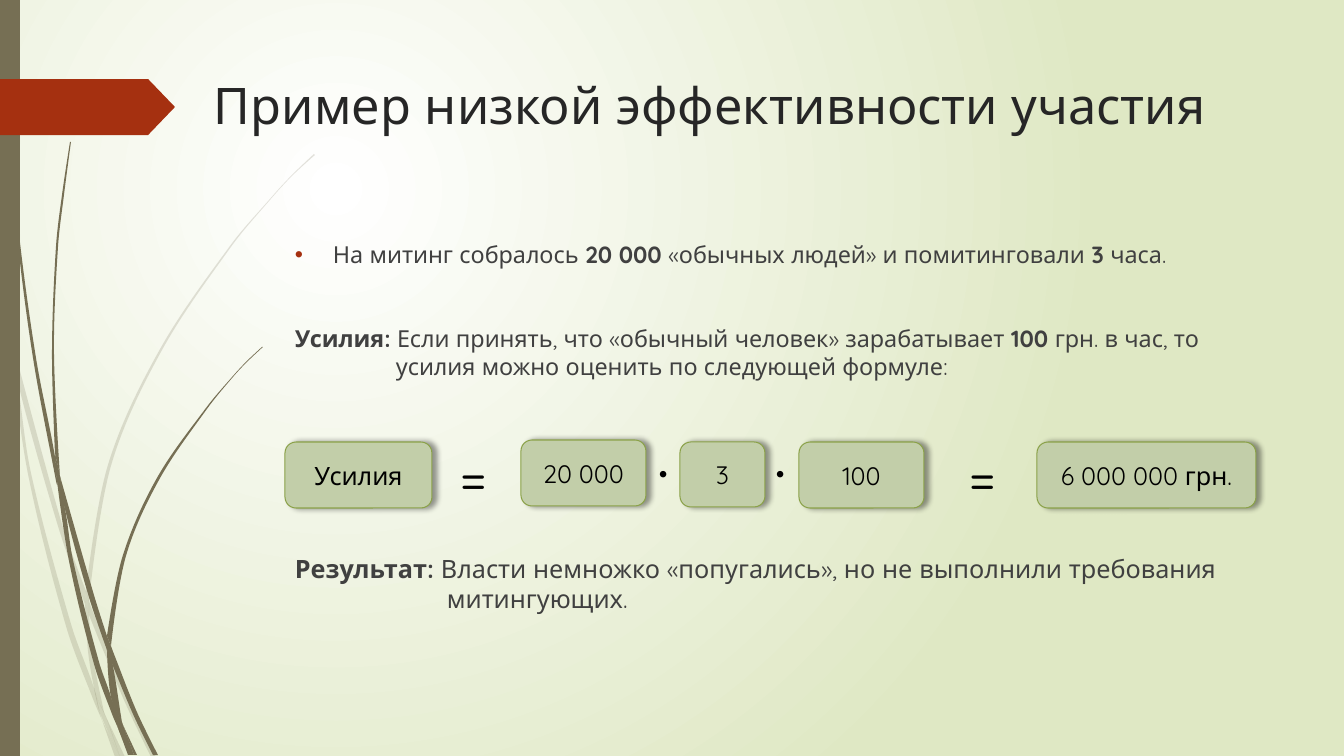
import math
from lxml import etree
from pptx import Presentation
from pptx import util as u
from pptx.dml.color import RGBColor
from pptx.enum import shapes, text
from pptx.oxml.ns import qn

WIDTH, HEIGHT = 1344, 756
PX = 12192000 / WIDTH
FONT = "Quicksand"
BROWN, RED, DARK, BLACK = "766F54", "A53010", "404040", "000000"

# Each piece of grass: points down its left edge, then down its right edge
PALE_GRASS = [
    ([(0, 301), (10, 347), (11, 353)], [(0, 284), (9, 325), (11, 353)]),
    ([(14, 348), (17, 379), (58, 526), (85, 604)], [(14, 348), (62, 524), (86, 591)]),
    ([(89, 615), (124, 700), (151, 757)], [(89, 601), (93, 612), (128, 698), (156, 757)]),
    ([(106, 717), (120, 757)], [(106, 717), (125, 757)]),
    ([(11, 353), (28, 474), (66, 626), (93, 699), (102, 720)],
     [(11, 353), (17, 379), (31, 473), (71, 624), (94, 688), (100, 713), (102, 720)]),
    ([(85, 604), (88, 651), (94, 688), (97, 698), (106, 717)],
     [(89, 613), (92, 651), (104, 712), (106, 717)]),
    ([(314, 154), (291, 176), (270, 199), (230, 246), (159, 351), (108, 465), (86, 591)],
     [(315, 155), (292, 176), (270, 200), (231, 247), (161, 352), (111, 466), (89, 601)]),
    ([(102, 720), (115, 757)], [(102, 720), (120, 757)]),
    ([(86, 591), (85, 604)], [(89, 601), (89, 613)]),
    ([(94, 688), (100, 713), (120, 757)], [(94, 688), (97, 698), (106, 717), (120, 757)]),
]
DARK_GRASS = [
    ([(3, 0), (4, 48), (7, 111), (17, 235), (33, 358), (56, 481), (57, 485)],
     [(4, 0), (5, 48), (8, 110), (19, 234), (36, 358), (55, 457), (57, 485)]),
    ([(60, 476), (65, 509), (89, 597), (107, 650)], [(60, 476), (94, 595), (107, 636)]),
    ([(111, 661), (133, 714), (153, 755)], [(111, 646), (114, 654), (137, 712), (158, 755)]),
    ([(57, 481), (69, 561), (94, 664), (112, 714), (118, 728)],
     [(57, 481), (65, 509), (73, 560), (99, 662), (111, 697), (118, 728)]),
    ([(70, 142), (62, 195), (56, 247), (52, 352), (55, 453)],
     [(71, 142), (64, 195), (58, 247), (54, 352), (60, 476)]),
    ([(123, 725), (134, 755)], [(123, 725), (137, 755)]),
    ([(55, 453), (57, 481), (65, 509)], [(55, 453), (60, 476), (65, 509)]),
    ([(262, 347), (247, 361), (233, 376), (206, 408), (157, 478), (123, 555), (107, 636)],
     [(263, 347), (247, 362), (233, 377), (207, 409), (159, 480), (126, 556), (111, 646)]),
    ([(118, 728), (128, 755)], [(118, 728), (132, 755)]),
    ([(107, 650), (111, 697), (123, 725)], [(107, 650), (112, 661), (122, 722), (123, 725)]),
    ([(107, 636), (107, 650)], [(111, 646), (112, 661)]),
    ([(111, 697), (118, 728), (131, 755)], [(111, 697), (117, 712), (123, 725), (134, 755)]),
]


def px(value):
    return u.Emu(round(value * PX))


def color(value):
    return RGBColor.from_string(value)


def paint(shape, fill, line=None):
    shape.shadow.inherit = False
    shape.fill.solid()
    shape.fill.fore_color.rgb = color(fill)
    if line:
        shape.line.color.rgb = color(line)
        shape.line.width = u.Pt(0.75)
    else:
        shape.line.fill.background()


def add_text_box(slide, left, top, width, height, wrap=True):
    box = slide.shapes.add_textbox(px(left), px(top), px(width), px(height))
    box.text_frame.word_wrap = wrap
    return box.text_frame


def write(paragraph, runs, size, font_color, hang=0):
    """Runs alternate between regular and bold, starting with regular."""
    for index, content in enumerate(runs):
        if content:
            run = paragraph.add_run()
            run.text = content
            if index % 2:
                run.font.bold = True
    paragraph.font.name = FONT
    paragraph.font.size = u.Pt(size)
    paragraph.font.color.rgb = color(font_color)
    if hang:
        properties = paragraph._p.get_or_add_pPr()
        properties.set("marL", str(px(hang)))
        properties.set("indent", str(-px(hang)))


def add_bullet(paragraph):
    properties = paragraph._p.get_or_add_pPr()
    bullet_color = etree.Element(qn("a:buClr"))
    etree.SubElement(bullet_color, qn("a:srgbClr"), val=RED)
    bullet_font = etree.Element(qn("a:buFont"), typeface="Arial")
    bullet = etree.Element(qn("a:buChar"), char="•")
    for offset, element in enumerate((bullet_color, bullet_font, bullet)):
        properties.insert(offset, element)


def handle(start, end, before, after):
    """Bezier handle at start, a third of the way to end, parallel to before-after."""
    span = math.dist(before, after) or 1
    reach = math.dist(start, end) / 3 / span
    return tuple(s + (a - b) * reach for s, a, b in zip(start, after, before))


def bend(blade, corners):
    """Turn the straight sides of a blade into curves, sharp only at its corners."""
    sides = list(blade._element.iter(qn("a:moveTo"), qn("a:lnTo")))
    points = [(int(side[0].get("x")), int(side[0].get("y"))) for side in sides]
    last = len(points) - 1
    for i in range(1, last + 1):
        start, end = points[i - 1], points[i]
        first = start if i - 1 in corners else handle(start, end, points[i - 2], end)
        second = end if i in corners or i == last else handle(end, start, points[i + 1], start)
        curve = etree.Element(qn("a:cubicBezTo"))
        for x, y in (first, second, end):
            etree.SubElement(curve, qn("a:pt"), x=str(round(x)), y=str(round(y)))
        sides[i].getparent().replace(sides[i], curve)


def add_grass(slide, pieces, opacity):
    group = slide.shapes.add_group_shape()
    for left_edge, right_edge in pieces:
        outline = left_edge + right_edge[::-1]
        builder = group.shapes.build_freeform(*outline[0], scale=PX / 100)
        fine = [(x * 100, y * 100) for x, y in outline]
        builder = group.shapes.build_freeform(*fine[0], scale=PX / 100)
        builder.add_line_segments(fine[1:], close=True)
        blade = builder.convert_to_shape()
        paint(blade, BROWN)
        bend(blade, {0, len(left_edge) - 1, len(left_edge), len(outline) - 1})
        if opacity < 100:
            fill = blade._element.spPr.find(qn("a:solidFill"))
            etree.SubElement(fill[0], qn("a:alpha"), val=str(opacity * 1000))


def set_background(slide):
    fill = slide.background.fill
    fill.gradient()
    for stop, value in zip(fill.gradient_stops, ("FFFFFF", "DFE8C4")):
        stop.color.rgb = color(value)
    gradient = slide.element.find(".//" + qn("a:gradFill"))
    circle = etree.Element(qn("a:path"), {"path": "circle"})
    etree.SubElement(circle, qn("a:fillToRect"), l="50000", t="50000", r="100000", b="100000")
    gradient.replace(gradient.find(qn("a:lin")), circle)


def add_decoration(slide):
    add_grass(slide, PALE_GRASS, 20)
    add_grass(slide, DARK_GRASS, 100)
    bar = slide.shapes.add_shape(shapes.MSO_SHAPE.RECTANGLE, 0, 0, px(20), px(HEIGHT))
    paint(bar, BROWN)
    arrow = slide.shapes.add_shape(shapes.MSO_SHAPE.PENTAGON, 0, px(79), px(175), px(56))
    arrow.adjustments[0] = 0.48
    paint(arrow, RED)


def add_title(slide, left, top, width, height):
    frame = add_text_box(slide, left, top, width, height)
    write(frame.paragraphs[0], ["Пример низкой эффективности участия"], 36, "262626")


def add_body(slide, left, top, width, height):
    frame = add_text_box(slide, left, top, width, height)
    rally, effort = frame.paragraphs[0], frame.add_paragraph()
    write(rally, ["На митинг собралось ", "20 000 ", "«обычных людей» и помитинговали ",
                  "3 ", "часа."], 16.7, DARK, hang=38)
    add_bullet(rally)
    write(effort, ["", "Усилия:", " Если принять, что «обычный человек» зарабатывает ", "100 ",
                   "грн. в час, то усилия можно оценить по следующей формуле:"],
          16.7, DARK, hang=101)
    effort.space_before = u.Pt(40)


def add_formula_box(slide, content, left, top, width, height):
    box = slide.shapes.add_shape(shapes.MSO_SHAPE.ROUNDED_RECTANGLE,
                                 px(left), px(top), px(width), px(height))
    paint(box, "C2CEA9", "8BA249")
    effects = box._element.spPr.find(qn("a:effectLst"))
    shadow = etree.SubElement(effects, qn("a:outerShdw"), blurRad=str(u.Pt(4)),
                              dist=str(u.Pt(3)), dir="0", rotWithShape="0")
    shade = etree.SubElement(shadow, qn("a:srgbClr"), val=BLACK)
    etree.SubElement(shade, qn("a:alpha"), val="40000")
    box.text_frame.word_wrap = True
    box.text_frame.vertical_anchor = text.MSO_ANCHOR.MIDDLE
    paragraph = box.text_frame.paragraphs[0]
    paragraph.alignment = text.PP_ALIGN.CENTER
    write(paragraph, [content], 18, BLACK)


def add_formula(slide, left, top):
    for content, x, y, width, height in (
            ("Усилия", 0, 2, 147, 66), ("20 000", 236, 0, 125, 66), ("3", 395, 2, 85, 65),
            ("100", 514, 2, 125, 66), ("6 000 000 грн.", 752, 2, 219, 66)):
        add_formula_box(slide, content, left + x, top + y, width, height)
    for sign, size, x, y, width, height in (
            ("=", 40, 165, -4, 54, 78), ("=", 40, 674, -4, 54, 78),
            ("•", 18, 364, 13, 39, 40), ("•", 18, 481, 13, 35, 40)):
        frame = add_text_box(slide, left + x, top + y, width, height, wrap=False)
        write(frame.paragraphs[0], [sign], size, BLACK)


def add_result(slide, left, top, width, height):
    frame = add_text_box(slide, left, top, width, height)
    write(frame.paragraphs[0], ["", "Результат:", " Власти немножко «попугались», "
                                "но не выполнили требования митингующих."], 18, DARK, hang=152)


def main():
    presentation = Presentation()
    presentation.slide_width, presentation.slide_height = px(WIDTH), px(HEIGHT)
    slide = presentation.slides.add_slide(presentation.slide_layouts[6])
    set_background(slide)
    add_decoration(slide)
    add_title(slide, 204, 69, 1064, 141)
    add_body(slide, 285, 235, 983, 141)
    add_formula(slide, 285, 440)
    add_result(slide, 285, 548, 983, 74)
    presentation.save("out.pptx")


if __name__ == "__main__":
    main()
